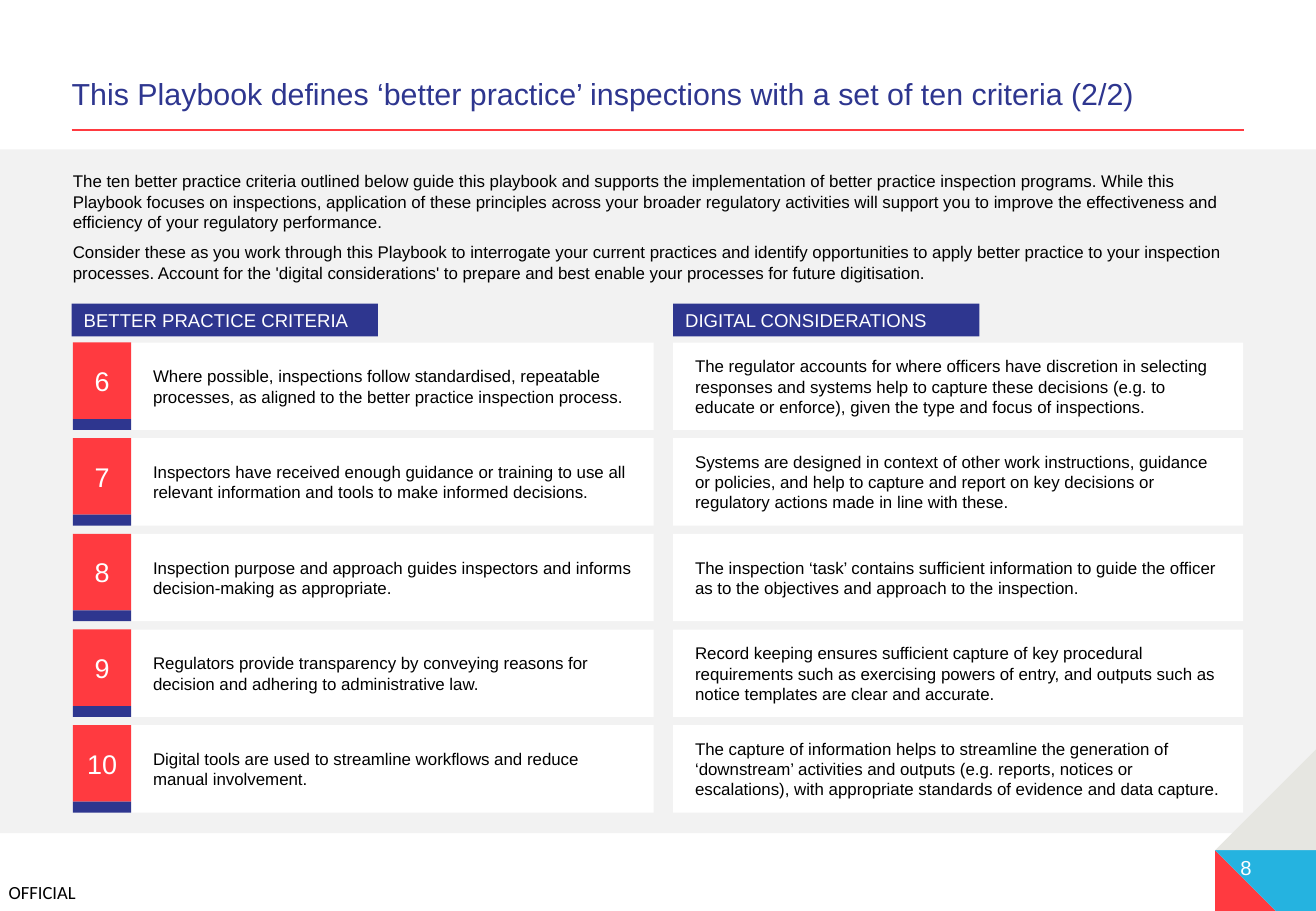
from dataclasses import dataclass, field
from typing import Any

from lxml.etree import SubElement
from pptx import Presentation
from pptx.dml.color import RGBColor
from pptx.enum.shapes import MSO_CONNECTOR, MSO_SHAPE
from pptx.enum.text import MSO_ANCHOR, MSO_AUTO_SIZE, PP_ALIGN
from pptx.oxml.ns import qn
from pptx.util import Inches, Pt

COLOURS = {
    "navy": "2E368F", "red": "FF3A40", "cyan": "25B3E0", "stone": "E6E6E1",
    "grey": "F2F2F2", "white": "FFFFFF", "black": "000000",
}
WIDTH, HEIGHT = 10.83, 7.5
FIRST_ROW_TOP, LAST_ROW_TOP, ROW_HEIGHT = 2.82, 5.97, 0.72
BADGE_LEFT, BADGE_WIDTH, BADGE_HEIGHT = 0.6, 0.48, 0.63
CORNER = 0.65


@dataclass(frozen=True)
class TextStyle:
    size: float
    colour: str = "black"
    font: str = "Arial"
    insets: tuple[float, float, float, float] = (0.1, 0.05, 0.1, 0.05)
    frame: dict[str, Any] = field(default_factory=dict)
    paragraph: dict[str, Any] = field(default_factory=dict)


@dataclass(frozen=True)
class Criterion:
    number: int
    practice: str
    digital: str


@dataclass(frozen=True)
class Triangle:
    points: tuple[tuple[float, float], ...]
    colour: str


MIDDLE = {"vertical_anchor": MSO_ANCHOR.MIDDLE}
TITLE = TextStyle(18, "navy", insets=(0, 0.05, 0, 0.05),
                  frame={"vertical_anchor": MSO_ANCHOR.BOTTOM},
                  paragraph={"line_spacing": 0.9})
INTRO = TextStyle(10, insets=(0, 0.05, 0.04, 0.05),
                  paragraph={"space_after": Pt(6)})
HEADING = TextStyle(11, "white", frame=MIDDLE)
CARD = TextStyle(10, insets=(0.18, 0.05, 0.18, 0.05), frame=MIDDLE)
BADGE = TextStyle(16, "white", frame=MIDDLE,
                  paragraph={"alignment": PP_ALIGN.CENTER})
MARKING = TextStyle(11, font="Calibri", insets=(0, 0, 0, 0))
PAGE_NUMBER = TextStyle(12, "white", insets=(0, 0.05, 0, 0.05),
                        paragraph={"alignment": PP_ALIGN.RIGHT})

INTRO_TEXT = [
    "The ten better practice criteria outlined below guide this playbook and supports the implementation of better practice inspection programs. While this Playbook focuses on inspections, application of these principles across your broader regulatory activities will support you to improve the effectiveness and efficiency of your regulatory performance.",
    "Consider these as you work through this Playbook to interrogate your current practices and identify opportunities to apply better practice to your inspection processes. Account for the 'digital considerations' to prepare and best enable your processes for future digitisation.",
]
CRITERIA = [
    Criterion(
        6,
        "Where possible, inspections follow standardised, repeatable processes, as aligned to the better practice inspection process.",
        "The regulator accounts for where officers have discretion in selecting responses and systems help to capture these decisions (e.g. to educate or enforce), given the type and focus of inspections."),
    Criterion(
        7,
        "Inspectors have received enough guidance or training to use all relevant information and tools to make informed decisions.",
        "Systems are designed in context of other work instructions, guidance or policies, and help to capture and report on key decisions or regulatory actions made in line with these."),
    Criterion(
        8,
        "Inspection purpose and approach guides inspectors and informs decision-making as appropriate.",
        "The inspection ‘task’ contains sufficient information to guide the officer as to the objectives and approach to the inspection."),
    Criterion(
        9,
        "Regulators provide transparency by conveying reasons for decision and adhering to administrative law.",
        "Record keeping ensures sufficient capture of key procedural requirements such as exercising powers of entry, and outputs such as notice templates are clear and accurate."),
    Criterion(
        10,
        "Digital tools are used to streamline workflows and reduce manual involvement.",
        "The capture of information helps to streamline the generation of ‘downstream’ activities and outputs (e.g. reports, notices or escalations), with appropriate standards of evidence and data capture."),
]

# Corner triangles meet at one apex
APEX = (WIDTH - CORNER, HEIGHT - CORNER)
BOTTOM_RIGHT = (WIDTH, HEIGHT)
EDGE = (WIDTH, APEX[1])
TRIANGLES = [
    Triangle((APEX, (WIDTH - 2 * CORNER, HEIGHT), BOTTOM_RIGHT), "red"),
    Triangle((EDGE, APEX, BOTTOM_RIGHT), "cyan"),
    Triangle(((WIDTH, APEX[1] - CORNER), APEX, EDGE), "stone"),
]


def rgb(name: str) -> RGBColor:
    return RGBColor.from_string(COLOURS[name])


def paint(shape: Any, colour: str) -> None:
    shape.shadow.inherit = False
    shape.fill.solid()
    shape.fill.fore_color.rgb = rgb(colour)
    shape.line.fill.background()


def write(shape: Any, lines: list[str], style: TextStyle) -> None:
    text_frame = shape.text_frame
    sides = ("margin_left", "margin_top", "margin_right", "margin_bottom")
    frame_format = {"word_wrap": True, "auto_size": MSO_AUTO_SIZE.NONE,
                    "vertical_anchor": MSO_ANCHOR.TOP,
                    **dict(zip(sides, map(Inches, style.insets))), **style.frame}
    for name, value in frame_format.items():
        setattr(text_frame, name, value)
    text_frame.text = "\n".join(lines)
    for paragraph in text_frame.paragraphs:
        for name, value in {"alignment": PP_ALIGN.LEFT, **style.paragraph}.items():
            setattr(paragraph, name, value)
        for name, value in {"name": style.font, "size": Pt(style.size)}.items():
            setattr(paragraph.font, name, value)
        paragraph.font.color.rgb = rgb(style.colour)


def add_box(slide: Any, left: float, top: float, width: float, height: float,
            colour: str, lines: list[str] | None = None,
            style: TextStyle = CARD) -> None:
    shape = slide.shapes.add_shape(MSO_SHAPE.RECTANGLE, *map(Inches, (left, top, width, height)))
    paint(shape, colour)
    if lines:
        write(shape, lines, style)


def add_label(slide: Any, left: float, top: float, width: float, height: float,
              text: str, style: TextStyle) -> None:
    write(slide.shapes.add_textbox(*map(Inches, (left, top, width, height))), [text], style)


def add_triangle(slide: Any, triangle: Triangle) -> None:
    start, *others = triangle.points
    builder = slide.shapes.build_freeform(*start, scale=Inches(1))
    builder.add_line_segments(others, close=True)
    paint(builder.convert_to_shape(), triangle.colour)


def add_title(slide: Any) -> None:
    title = slide.shapes.title
    place = {"left": 0.59, "top": 0.6, "width": 9.65, "height": 0.37}
    for name, value in place.items():
        setattr(title, name, Inches(value))
    write(title, ["This Playbook defines ‘better practice’ inspections with a set of ten criteria (2/2)"], TITLE)
    rule = slide.shapes.add_connector(
        MSO_CONNECTOR.STRAIGHT, *map(Inches, (0.59, 1.07, 10.24, 1.07)))
    rule.line.color.rgb = rgb("red")
    rule.line.width = Pt(1.25)
    SubElement(rule._element.spPr, qn("a:effectLst"))


def add_criterion(slide: Any, top: float, criterion: Criterion) -> None:
    add_box(slide, 1.08, top, 4.3, ROW_HEIGHT, "white", [criterion.practice])
    add_box(slide, 5.54, top, 4.69, ROW_HEIGHT, "white", [criterion.digital])
    add_box(slide, BADGE_LEFT, top, BADGE_WIDTH, BADGE_HEIGHT, "red",
            [str(criterion.number)], BADGE)
    add_box(slide, BADGE_LEFT, top + BADGE_HEIGHT, BADGE_WIDTH,
            ROW_HEIGHT - BADGE_HEIGHT, "navy")


def main() -> None:
    presentation = Presentation()
    presentation.slide_width, presentation.slide_height = Inches(WIDTH), Inches(HEIGHT)
    slide = presentation.slides.add_slide(presentation.slide_layouts[5])

    # Page frame
    add_label(slide, 0.07, 7.25, 0.65, 0.18, "OFFICIAL", MARKING)
    add_box(slide, 0, 1.23, WIDTH, 5.63, "grey")
    for triangle in TRIANGLES:
        add_triangle(slide, triangle)
    add_label(slide, 9.43, 6.99, 0.87, 0.3, "8", PAGE_NUMBER)
    add_title(slide)

    # Introduction and column headings
    add_box(slide, 0.6, 1.36, 9.63, 1.23, "grey", INTRO_TEXT, INTRO)
    for left, heading in ((0.59, "BETTER PRACTICE CRITERIA"), (5.54, "DIGITAL CONSIDERATIONS")):
        add_box(slide, left, 2.5, 2.52, 0.27, "navy", [heading], HEADING)

    # Criteria rows
    row_step = (LAST_ROW_TOP - FIRST_ROW_TOP) / (len(CRITERIA) - 1)
    for row, criterion in enumerate(CRITERIA):
        add_criterion(slide, FIRST_ROW_TOP + row * row_step, criterion)

    presentation.save("out.pptx")


if __name__ == "__main__":
    main()
